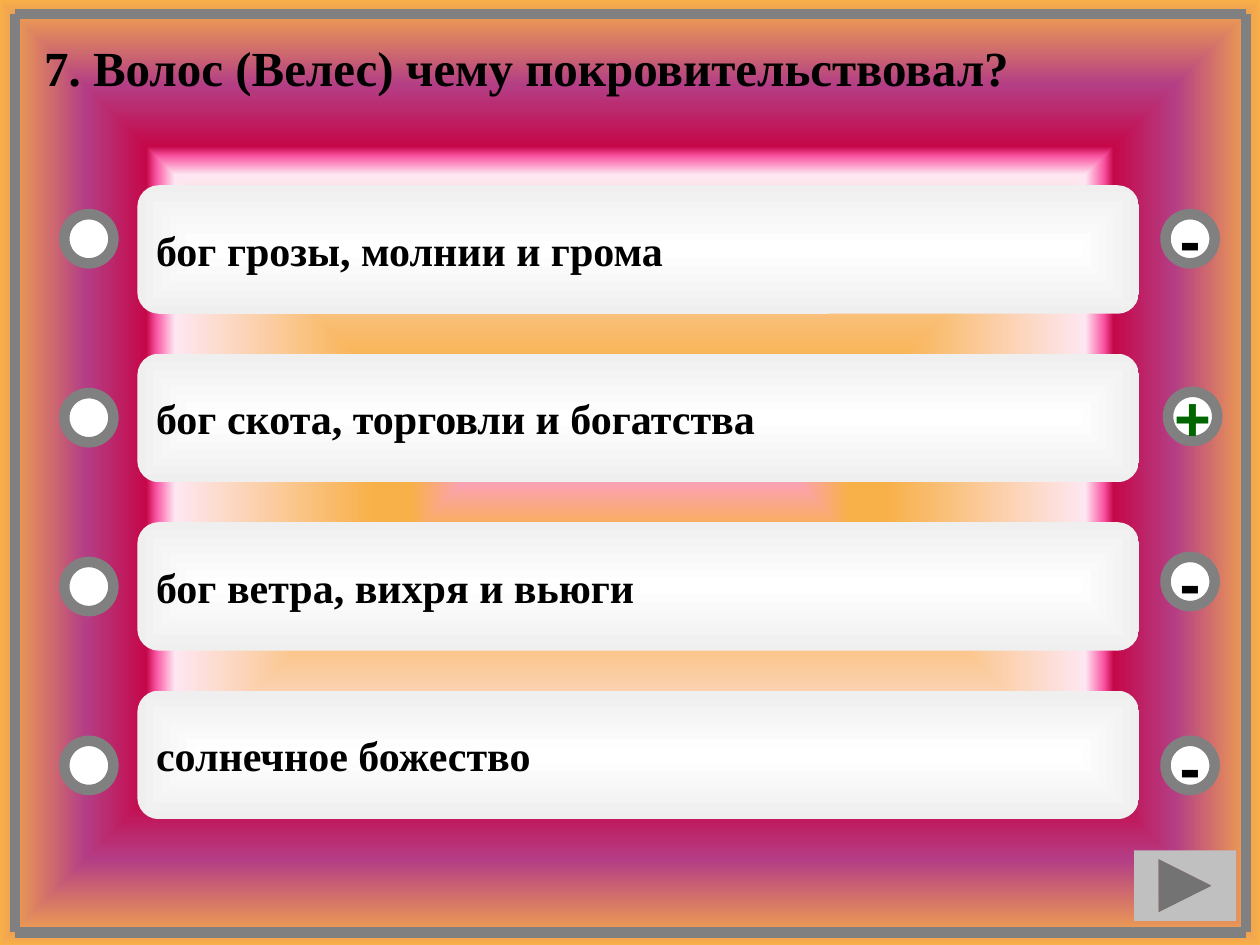
"""Build a quiz slide with four answers and their marks."""
from lxml.etree import SubElement
from pptx import Presentation
from pptx.dml.color import RGBColor
from pptx.enum.shapes import MSO_CONNECTOR, MSO_SHAPE
from pptx.enum.text import MSO_ANCHOR, MSO_AUTO_SIZE, PP_ALIGN
from pptx.oxml.ns import qn
from pptx.util import Inches, Pt

BLACK = RGBColor(0x00, 0x00, 0x00)
WHITE = RGBColor(0xFF, 0xFF, 0xFF)
GRAY = RGBColor(0x80, 0x80, 0x80)
SILVER = RGBColor(0xC0, 0xC0, 0xC0)
GREEN = RGBColor(0x00, 0x66, 0x00)
PALE = RGBColor(0xEF, 0xEF, 0xEF)
ORANGE = RGBColor(0xF8, 0xB0, 0x49)

BACKGROUND_STOPS = [
    (0, RGBColor(0xFC, 0x9F, 0xCB)), (13, ORANGE), (21, ORANGE),
    (63, RGBColor(0xFE, 0xE7, 0xF2)), (67, RGBColor(0xF9, 0x52, 0xA0)),
    (69, RGBColor(0xC5, 0x08, 0x49)), (82, RGBColor(0xB4, 0x3E, 0x85)),
    (100, ORANGE),
]
ANSWER_STOPS = [(0, WHITE), (100, PALE)]

QUESTION = "7. Волос (Велес) чему покровительствовал?"
ANSWERS = [
    {"text": "бог грозы, молнии и грома", "mark": "-", "color": BLACK,
     "bullet_top": 1.7, "mark_at": (9.25, 1.7)},
    {"text": "бог скота, торговли и богатства", "mark": "+", "color": GREEN,
     "bullet_top": 3.12, "mark_at": (9.27, 3.11)},
    {"text": "бог ветра, вихря и вьюги", "mark": "-", "color": BLACK,
     "bullet_top": 4.46, "mark_at": (9.25, 4.42)},
    {"text": "солнечное божество", "mark": "-", "color": BLACK,
     "bullet_top": 5.88, "mark_at": (9.25, 5.88)},
]
ANSWER_TOP, ANSWER_STEP = 1.47, 1.337
LEFT, TOP, RIGHT, BOTTOM = 0.12, 0.11, 9.89, 7.4
FRAME = [
    (LEFT, TOP, RIGHT, TOP), (LEFT, TOP, LEFT, BOTTOM),
    (LEFT, BOTTOM, RIGHT, BOTTOM), (RIGHT, TOP, RIGHT, BOTTOM),
]


def set_gradient(fill, owner, stops):
    """Fill with stops spreading from the centre to the edges."""
    fill.gradient()
    gradient = next(owner.iter(qn("a:gradFill")))
    for child in list(gradient):
        gradient.remove(child)
    stop_list = SubElement(gradient, qn("a:gsLst"))
    for position, color in stops:
        stop = SubElement(stop_list, qn("a:gs"), pos=str(position * 1000))
        SubElement(stop, qn("a:srgbClr"), val=str(color))
    spread = SubElement(gradient, qn("a:path"))
    spread.set("path", "shape")
    SubElement(spread, qn("a:fillToRect"),
               {side: "50000" for side in ("l", "t", "r", "b")})


def write(box, text, align, frame_format, font_format):
    """Put one formatted line of text in a box."""
    frame = box.text_frame
    for name, value in frame_format.items():
        setattr(frame, name, value)
    para = frame.paragraphs[0]
    para.alignment = align
    span = para.add_run()
    span.text = text
    color = font_format["color"]
    for name, value in font_format.items():
        if name != "color":
            setattr(span.font, name, value)
    span.font.color.rgb = color


def add_box(page, kind, *place):
    """Add a plain shape without line or shadow."""
    box = page.shapes.add_shape(kind, *map(Inches, place))
    box.shadow.inherit = False
    box.line.fill.background()
    return box


def add_circle(page, left, top):
    """Add a white circle with a thick gray ring."""
    circle = add_box(page, MSO_SHAPE.OVAL, left, top, 0.39, 0.39)
    circle.fill.solid()
    circle.fill.fore_color.rgb = WHITE
    circle.line.color.rgb = GRAY
    circle.line.width = Pt(6)
    return circle


def add_frame(page):
    """Draw the four sides of the border as one group."""
    group = page.shapes.add_group_shape()
    for side in FRAME:
        line = group.shapes.add_connector(
            MSO_CONNECTOR.STRAIGHT, *map(Inches, side))
        line.line.color.rgb = GRAY
        line.line.width = Pt(6)
        SubElement(line.element.spPr, qn("a:effectLst"))


def add_answer(page, index, answer):
    """Add one answer bar with its bullet and its mark."""
    top = ANSWER_TOP + index * ANSWER_STEP
    bar = add_box(page, MSO_SHAPE.ROUNDED_RECTANGLE, 1.09, top, 7.95, 1.02)
    bar.adjustments[0] = 0.167
    set_gradient(bar.fill, bar.element, ANSWER_STOPS)
    write(bar, answer["text"], PP_ALIGN.LEFT,
          {"word_wrap": True, "vertical_anchor": MSO_ANCHOR.MIDDLE},
          {"name": "Times New Roman", "size": Pt(24), "bold": True,
           "color": BLACK})
    add_circle(page, 0.51, answer["bullet_top"])
    write(add_circle(page, *answer["mark_at"]), answer["mark"],
          PP_ALIGN.CENTER,
          {"word_wrap": False, "vertical_anchor": MSO_ANCHOR.MIDDLE},
          {"name": "Arial", "size": Pt(36), "bold": True,
           "color": answer["color"]})


def main():
    """Create the deck and save it."""
    deck = Presentation()
    deck.slide_width, deck.slide_height = Inches(10), Inches(7.5)
    page = deck.slides.add_slide(deck.slide_layouts[5])
    set_gradient(page.background.fill, page.element, BACKGROUND_STOPS)
    add_frame(page)

    title = page.shapes.title
    place = {"left": 0.25, "top": 0.25, "width": 9.27, "height": 0.57}
    for name, value in place.items():
        setattr(title, name, Inches(value))
    write(title, QUESTION, PP_ALIGN.LEFT,
          {"word_wrap": True, "vertical_anchor": MSO_ANCHOR.TOP,
           "auto_size": MSO_AUTO_SIZE.SHAPE_TO_FIT_TEXT},
          {"name": "Times New Roman", "size": Pt(28), "bold": True,
           "color": BLACK})

    for index, answer in enumerate(ANSWERS):
        add_answer(page, index, answer)

    button = add_box(page, MSO_SHAPE.ACTION_BUTTON_FORWARD_OR_NEXT,
                     9, 6.75, 0.81, 0.56)
    button.fill.solid()
    button.fill.fore_color.rgb = SILVER
    deck.save("out.pptx")


if __name__ == "__main__":
    main()
